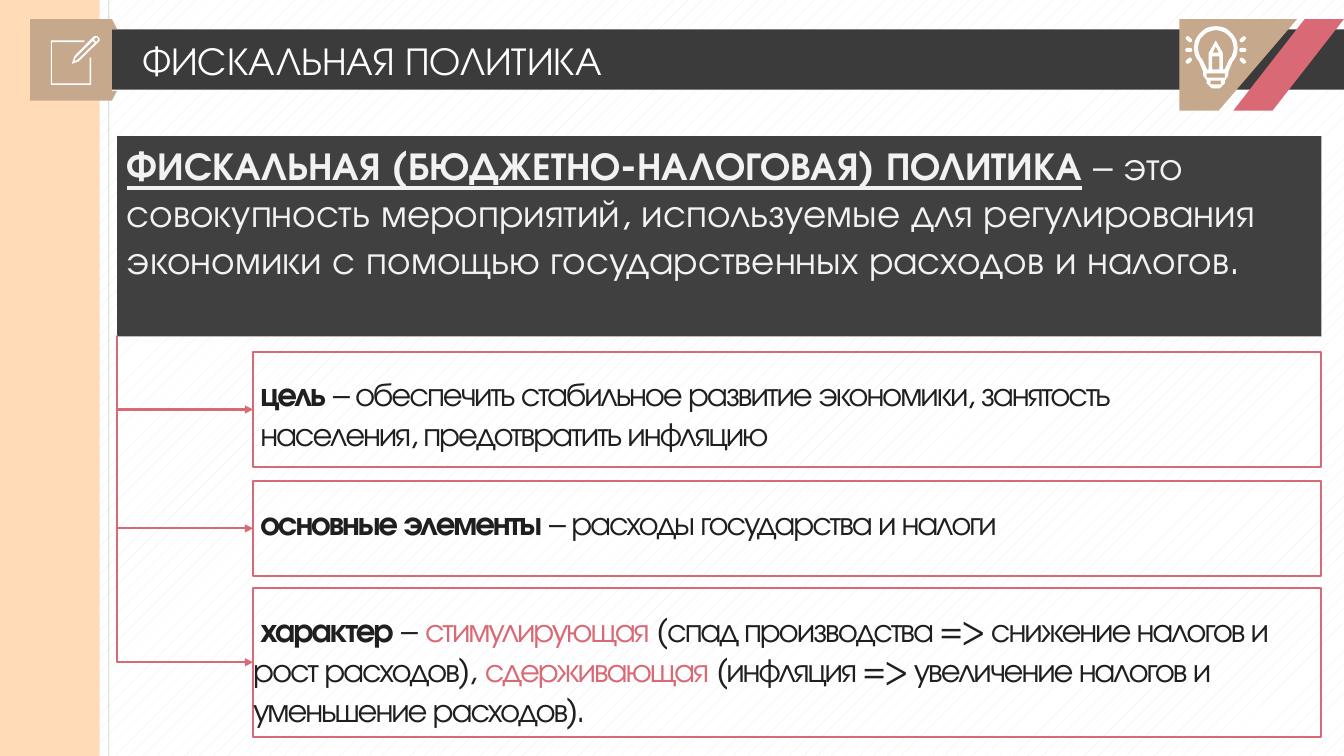
"""Builds the slide on fiscal policy: title bar, definition and three linked cards."""
from math import cos, radians, sin

from lxml.etree import SubElement
from pptx import Presentation
from pptx.dml.color import RGBColor
from pptx.enum.dml import MSO_PATTERN
from pptx.enum.shapes import MSO_CONNECTOR, MSO_SHAPE
from pptx.enum.text import MSO_ANCHOR, PP_ALIGN
from pptx.oxml.ns import qn
from pptx.util import Cm, Pt

WHITE = RGBColor(0xFF, 0xFF, 0xFF)
DOTS = RGBColor(0xE9, 0xE9, 0xE9)
INK = RGBColor(0x1F, 0x1F, 0x1F)
BAR = RGBColor(0x3B, 0x3B, 0x3B)
PANEL = RGBColor(0x40, 0x40, 0x40)
PALE = RGBColor(0xF2, 0xF2, 0xF2)
PEACH = RGBColor(0xFF, 0xDB, 0xB7)
TAN = RGBColor(0xC6, 0xA9, 0x8C)
ROSE = RGBColor(0xD9, 0x69, 0x74)
FONT = "TeX Gyre Adventor"

deck = Presentation()
deck.slide_width, deck.slide_height = Cm(33.87), Cm(19.05)
slide = deck.slides.add_slide(deck.slide_layouts[6])
shapes = slide.shapes
backdrop = slide.background.fill
backdrop.patterned()
backdrop.pattern = MSO_PATTERN.PERCENT_5
backdrop.fore_color.rgb = DOTS
backdrop.back_color.rgb = WHITE


def add_block(kind, box, color):
    block = shapes.add_shape(kind, *[Cm(length) for length in box])
    block.shadow.inherit = False
    block.fill.solid()
    block.fill.fore_color.rgb = color
    block.line.fill.background()
    return block


def add_run(paragraph, text, size, color, bold=False):
    run = paragraph.add_run()
    run.text = text
    run.font.name = FONT
    run.font.size = Pt(size)
    run.font.color.rgb = color
    run.font.bold = bold
    return run


margin_rule = shapes.add_connector(MSO_CONNECTOR.STRAIGHT, Cm(2.74), 0, Cm(2.74), Cm(19.05))
margin_rule.line.color.rgb = INK
margin_rule.line.width = Pt(0.5)
SubElement(margin_rule.line._ln.find(".//" + qn("a:srgbClr")), qn("a:alpha"), val="20000")
SubElement(margin_rule._element.spPr, qn("a:effectLst"))

add_block(MSO_SHAPE.RECTANGLE, (0, 0.74, 33.87, 1.52), BAR)
add_block(MSO_SHAPE.RECTANGLE, (0, 0, 2.51, 19.05), PEACH)
add_block(MSO_SHAPE.RECTANGLE, (0.76, 0.48, 2.06, 2.06), TAN)
add_block(MSO_SHAPE.RIGHT_TRIANGLE, (2.82, 0.48, 0.13, 0.25), TAN)
lower_fold = add_block(MSO_SHAPE.RIGHT_TRIANGLE, (2.82, 2.29, 0.13, 0.25), TAN)
lower_fold._element.spPr.xfrm.set("flipV", "1")

title = shapes.add_textbox(Cm(3.58), Cm(0.91), Cm(26.77), Cm(1.19)).text_frame
title.word_wrap = True
title.vertical_anchor = MSO_ANCHOR.MIDDLE
title.margin_left = title.margin_top = title.margin_right = title.margin_bottom = 0
add_run(title.paragraphs[0], "ФИСКАЛЬНАЯ ПОЛИТИКА", 28, WHITE)

stripe = add_block(MSO_SHAPE.PARALLELOGRAM, (31.08, 0.48, 2.79, 2.31), ROSE)
stripe.adjustments[0] = 0.78

BULB_X, BULB_Y = 3064, 121
glass_outer, glass_inner = (
    [(radius * cos(radians(turn)), BULB_Y + radius * sin(radians(turn))) for turn in range(-220, 41, 10)]
    for radius in (55, 45)
)
socket = [(32, 180), (32, 190), (23, 203), (23, 210), (10, 223)]
pencil_side = [(22, 175), (18, 175), (18, 134)]
bulb = [
    glass_outer + socket + [(-x, y) for x, y in reversed(socket)],
    glass_inner + pencil_side + [(0, 102)] + [(-x, y) for x, y in reversed(pencil_side)],
    [(0, 117), (8, 133), (-8, 133)],
]
for half, top, bottom in ((9, 142, 175), (23, 185, 196), (13, 203, 213)):
    bulb.append([(-half, top), (half, top), (half, bottom), (-half, bottom)])
bulb = [[(BULB_X + x, y) for x, y in contour] for contour in bulb]

corner_panel = [[(2972, 48), (3269, 48), (3071, 279), (2972, 279)]]
notepad = [[(213, 102), (128, 102), (128, 214), (230, 214), (230, 145),
            (226, 145), (226, 210), (131, 210), (131, 106), (213, 106)]]
pencil = [
    [(181, 161), (188, 141), (237, 91), (245, 91), (251, 97), (251, 103), (198, 155)],
    [(196, 150), (187, 156), (191, 145), (234, 103), (239, 108)],
    [(247, 101), (242, 106), (237, 100), (241, 95), (244, 94), (247, 98)],
]
for contours, color in ((corner_panel, TAN), (bulb, WHITE), (notepad, WHITE), (pencil, WHITE)):
    builder = shapes.build_freeform(*contours[0][0], scale=Cm(0.01))
    builder.add_line_segments(contours[0][1:])
    for hole in contours[1:]:
        builder.move_to(*hole[0])
        builder.add_line_segments(hole[1:])
    icon = builder.convert_to_shape()
    icon.shadow.inherit = False
    icon.fill.solid()
    icon.fill.fore_color.rgb = color
    icon.line.fill.background()

for side in (-1, 1):
    for step in (-1, 0, 1):
        ray_x, ray_y = 30.64 + side * 0.68, 1.26 + step * 0.27
        ray = add_block(MSO_SHAPE.ROUNDED_RECTANGLE, (ray_x - 0.09, ray_y - 0.05, 0.18, 0.1), WHITE)
        ray.adjustments[0] = 0.5
        ray.rotation = side * step * 42

definition = add_block(MSO_SHAPE.RECTANGLE, (2.95, 3.43, 30.35, 5.05), PANEL).text_frame
definition.word_wrap = True
definition.vertical_anchor = MSO_ANCHOR.TOP
statement = definition.paragraphs[0]
statement.alignment = PP_ALIGN.LEFT
term = add_run(statement, "ФИСКАЛЬНАЯ (БЮДЖЕТНО-НАЛОГОВАЯ) ПОЛИТИКА", 28, PALE, True)
term.font.underline = True
add_run(statement, " ", 28, PALE, True)
add_run(statement, "– это совокупность мероприятий, используемые для регулирования экономики "
        "с помощью государственных расходов и налогов.", 28, PALE)

goal = [
    [(" цель ", INK, True), ("– обеспечить стабильное развитие экономики, занятость", INK, False)],
    [(" населения, предотвратить инфляцию", INK, False)],
]
elements = [[(" основные элементы ", INK, True), ("– расходы государства и налоги", INK, False)]]
character = [[
    (" характер ", INK, True),
    ("– ", INK, False),
    ("стимулирующая", ROSE, False),
    (" (спад производства => снижение налогов и рост расходов), ", INK, False),
    ("сдерживающая", ROSE, False),
    (" (инфляция => увеличение налогов и уменьшение расходов).", INK, False),
]]
cards = [
    (8.86, 2.92, 8.46, goal),
    (12.12, 2.39, 8.46, elements),
    (14.81, 3.76, 11.86, character),
]
for top, height, arrow_start, lines in cards:
    card = add_block(MSO_SHAPE.RECTANGLE, (6.38, top, 26.92, height), WHITE)
    card.fill.background()
    card.line.color.rgb = ROSE
    card.line.width = Pt(1.5)
    frame = card.text_frame
    frame.word_wrap = True
    frame.vertical_anchor = MSO_ANCHOR.TOP
    frame.margin_left = frame.margin_right = frame.margin_bottom = 0
    frame.margin_top = Cm(0.53)
    for number, line in enumerate(lines):
        paragraph = frame.add_paragraph() if number else frame.paragraphs[0]
        paragraph.alignment = PP_ALIGN.LEFT
        for text, color, bold in line:
            run = add_run(paragraph, text, 24, color, bold)
            run.font._element.set("spc", "-150")

    arrow = shapes.add_connector(
        MSO_CONNECTOR.ELBOW, Cm(2.95), Cm(arrow_start), Cm(6.38), Cm(top + height / 2))
    arrow.line.color.rgb = ROSE
    arrow.line.width = Pt(1.5)
    SubElement(arrow.line._ln, qn("a:tailEnd"), type="triangle")
    bend = arrow._element.spPr.find(qn("a:prstGeom")).find(qn("a:avLst"))
    SubElement(bend, qn("a:gd"), name="adj1", fmla="val 100")
    SubElement(arrow._element.spPr, qn("a:effectLst"))

deck.save("out.pptx")
